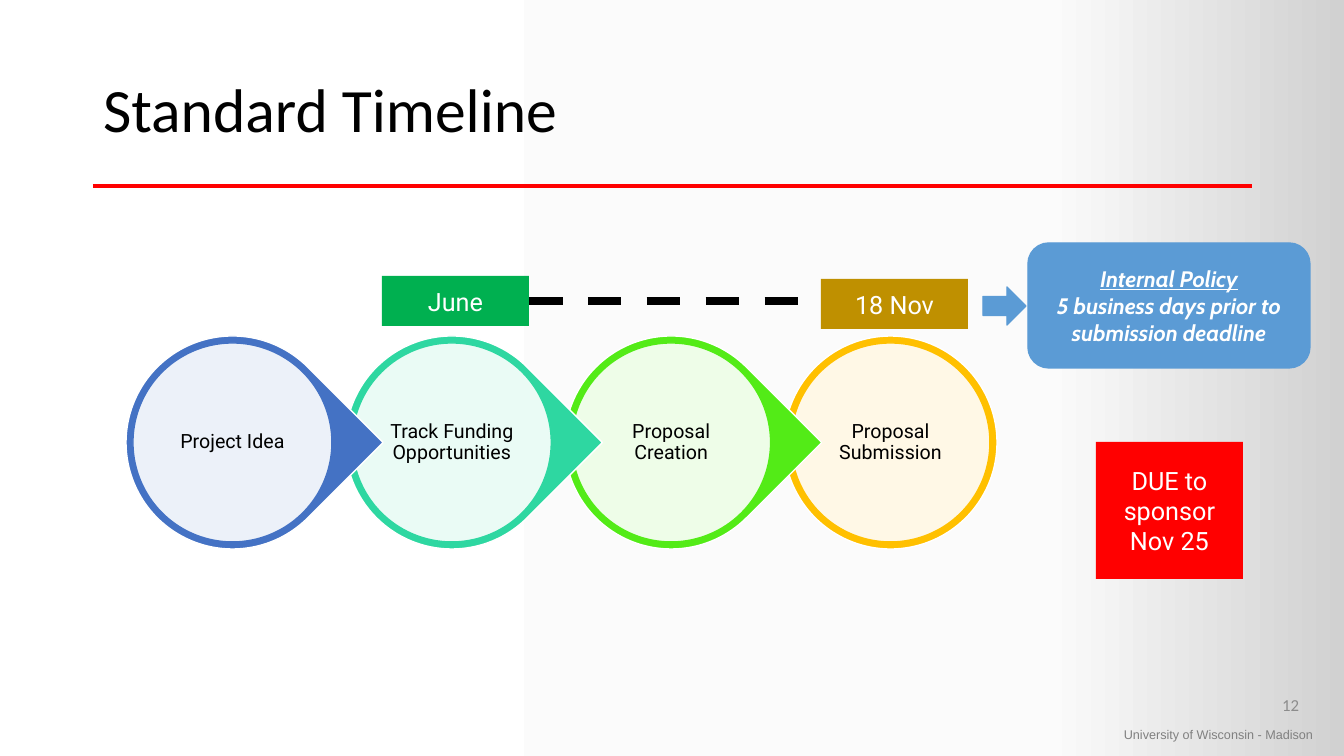
from copy import deepcopy

from lxml import etree
from pptx import Presentation
from pptx.dml.color import RGBColor
from pptx.enum.dml import MSO_LINE
from pptx.enum.shapes import MSO_CONNECTOR, MSO_SHAPE
from pptx.enum.text import MSO_ANCHOR, PP_ALIGN
from pptx.oxml.ns import qn
from pptx.util import Emu, Pt

EMU_PER_PX = 914400 / 100.8
LEFT, CENTER, RIGHT = PP_ALIGN.LEFT, PP_ALIGN.CENTER, PP_ALIGN.RIGHT
TOP, MIDDLE = MSO_ANCHOR.TOP, MSO_ANCHOR.MIDDLE
RECTANGLE, ROUNDED = MSO_SHAPE.RECTANGLE, MSO_SHAPE.ROUNDED_RECTANGLE
OVAL, TEARDROP, ARROW = MSO_SHAPE.OVAL, MSO_SHAPE.TEAR, MSO_SHAPE.RIGHT_ARROW
STRAIGHT, DASH = MSO_CONNECTOR.STRAIGHT, MSO_LINE.DASH
COLORS = {
    "white": "FFFFFF", "pale": "FBFBFB", "silver": "D1D1D1", "black": "000000",
    "red": "FF0000", "footer": "808080", "number": "8C8C8C", "blue": "4472C4",
    "teal": "2ED7A1", "lime": "53EB17", "amber": "FFC000", "green": "00B050",
    "ochre": "BF9000", "sky": "5B9BD5",
}
BACKDROP = [(0, "white"), (0.78, "pale"), (1, "silver")]
STAGES = [
    ("Project Idea", "blue"),
    ("Track Funding Opportunities", "teal"),
    ("Proposal Creation", "lime"),
    ("Proposal Submission", "amber"),
]


def px(length):
    """Turn a length in px into EMU."""
    return Emu(round(length * EMU_PER_PX))


def rgb(name):
    """Return a named colour."""
    return RGBColor.from_string(COLORS[name])


def write(holder, lines, size, font, color, align=CENTER, anchor=MIDDLE):
    """Fill a shape with formatted lines and return its paragraphs."""
    frame = holder.text_frame
    frame.word_wrap = True
    frame.vertical_anchor = anchor
    frame.text = "\n".join(lines)
    for paragraph in frame.paragraphs:
        paragraph.alignment = align
        for run in paragraph.runs:
            run.font.size = Pt(size)
            run.font.name = font
            run.font.color.rgb = rgb(color)
    return frame.paragraphs


def add_text(slide, box, line, size, font, color, align=CENTER, anchor=MIDDLE):
    """Add a one-paragraph text box."""
    holder = slide.shapes.add_textbox(*map(px, box))
    write(holder, [line], size, font, color, align, anchor)
    return holder


def add_filled(slide, kind, box, fill, line=None):
    """Add a flat preset shape."""
    shape = slide.shapes.add_shape(kind, *map(px, box))
    shape.shadow.inherit = False
    shape.fill.solid()
    shape.fill.fore_color.rgb = rgb(fill)
    if line:
        shape.line.color.rgb = rgb(line)
        shape.line.width = Pt(1)
    else:
        shape.line.fill.background()
    return shape


def add_rule(slide, start, end, color, width):
    """Add a straight line without a shadow."""
    rule = slide.shapes.add_connector(STRAIGHT, *map(px, start + end))
    rule.line.color.rgb = rgb(color)
    rule.line.width = Pt(width)
    etree.SubElement(rule._element.spPr, qn("a:effectLst"))
    return rule


def paint_background(slide):
    """Paint the left-to-right gradient backdrop."""
    fill = slide.background.fill
    fill.gradient()
    fill.gradient_angle = 0
    stops = slide._element.find(".//" + qn("a:gsLst"))
    stops.append(deepcopy(stops[-1]))
    for stop, (position, color) in zip(fill.gradient_stops, BACKDROP):
        stop.position = position
        stop.color.rgb = rgb(color)


def add_heading(slide, box):
    """Place the title and the red rule below it."""
    left, top, width, height = box
    bottom = top + height
    add_rule(slide, (left, bottom), (left + width, bottom), "red", 3)
    title = slide.shapes.title
    title.left, title.top, title.width, title.height = map(px, box)
    paragraphs = write(title, ["Standard Timeline"], 44, "Calibri", "black", LEFT)
    paragraphs[0].line_spacing = 0.9


def add_footer(slide, box):
    """Place the page number and the university name."""
    left, top, width, height = box
    add_text(slide, (left, top, width - 25, 40), "12", 12, "Calibri", "number", RIGHT)
    add_text(slide, (left, top + 37, width, height - 37),
             "University of Wisconsin - Madison", 9, "Arial", "footer", LEFT, TOP)


def add_stage(slide, box, name, color, is_last):
    """Place one ringed stage, pointed unless it is the last."""
    left, top, side, _ = box
    ring = add_filled(slide, OVAL if is_last else TEARDROP, box, color, "white")
    ring.rotation = 0 if is_last else 45
    disc_box = (left + 7, top + 7, side - 14, side - 14)
    disc = add_filled(slide, OVAL, disc_box, "white", color)
    veil = disc._element.spPr.find(qn("a:solidFill"))[0]
    etree.SubElement(veil, qn("a:alpha"), val="90000")
    label_box = (left + 35, top + 35, side - 70, side - 70)
    label = add_text(slide, label_box, name, 14, "Roboto", "black")
    frame = label.text_frame
    frame.margin_left = frame.margin_right = px(2)
    frame.margin_top = frame.margin_bottom = px(2)
    frame.paragraphs[0].line_spacing = 0.9


def add_stages(slide, box):
    """Place the stages so that each point overlaps the next ring."""
    left, top, width, side = box
    last = len(STAGES) - 1
    step = (width - side) / last
    for index, (name, color) in reversed(list(enumerate(STAGES))):
        stage_box = (left + index * step, top, side, side)
        add_stage(slide, stage_box, name, color, index == last)


def add_date(slide, box, date, color):
    """Place a coloured date block."""
    block = add_filled(slide, RECTANGLE, box, color)
    write(block, [date], 18, "Roboto", "white")
    return block


def add_period(slide, box):
    """Place the June to November span."""
    left, top, width, height = box
    middle = top + height // 2
    span = add_rule(slide, (left + 147, middle), (left + 431, middle), "black", 6)
    span.line.dash_style = DASH
    june = add_date(slide, (left, top, 147, height), "June", "green")
    add_date(slide, (left + width - 147, top + 3, 147, height), "18 Nov", "ochre")
    span.begin_connect(june, 3)


def add_policy(slide, box):
    """Place the arrow and the internal policy note."""
    left, top, width, height = box
    add_filled(slide, ARROW, (left, top + 44, 43, 38), "sky", "sky")
    note_box = (left + 45, top, width - 45, height)
    note = add_filled(slide, ROUNDED, note_box, "sky", "sky")
    lines = ["Internal Policy", "5 business days prior to submission deadline"]
    paragraphs = write(note, lines, 16, "Cabin", "white")
    for paragraph in paragraphs:
        paragraph.runs[0].font.bold = True
        paragraph.runs[0].font.italic = True
    paragraphs[0].runs[0].font.underline = True


def main():
    """Build and save the timeline slide."""
    deck = Presentation()
    deck.slide_width, deck.slide_height = px(1344), px(756)
    slide = deck.slides.add_slide(deck.slide_layouts[5])
    paint_background(slide)
    add_heading(slide, (93, 40, 1159, 146))
    add_footer(slide, (1114, 685, 220, 62))
    add_stages(slide, (126, 336, 871, 213))
    add_period(slide, (382, 276, 586, 50))
    add_policy(slide, (983, 243, 327, 125))
    add_date(slide, (1096, 442, 147, 137), "DUE to sponsor Nov 25", "red")
    deck.save("out.pptx")


if __name__ == "__main__":
    main()
